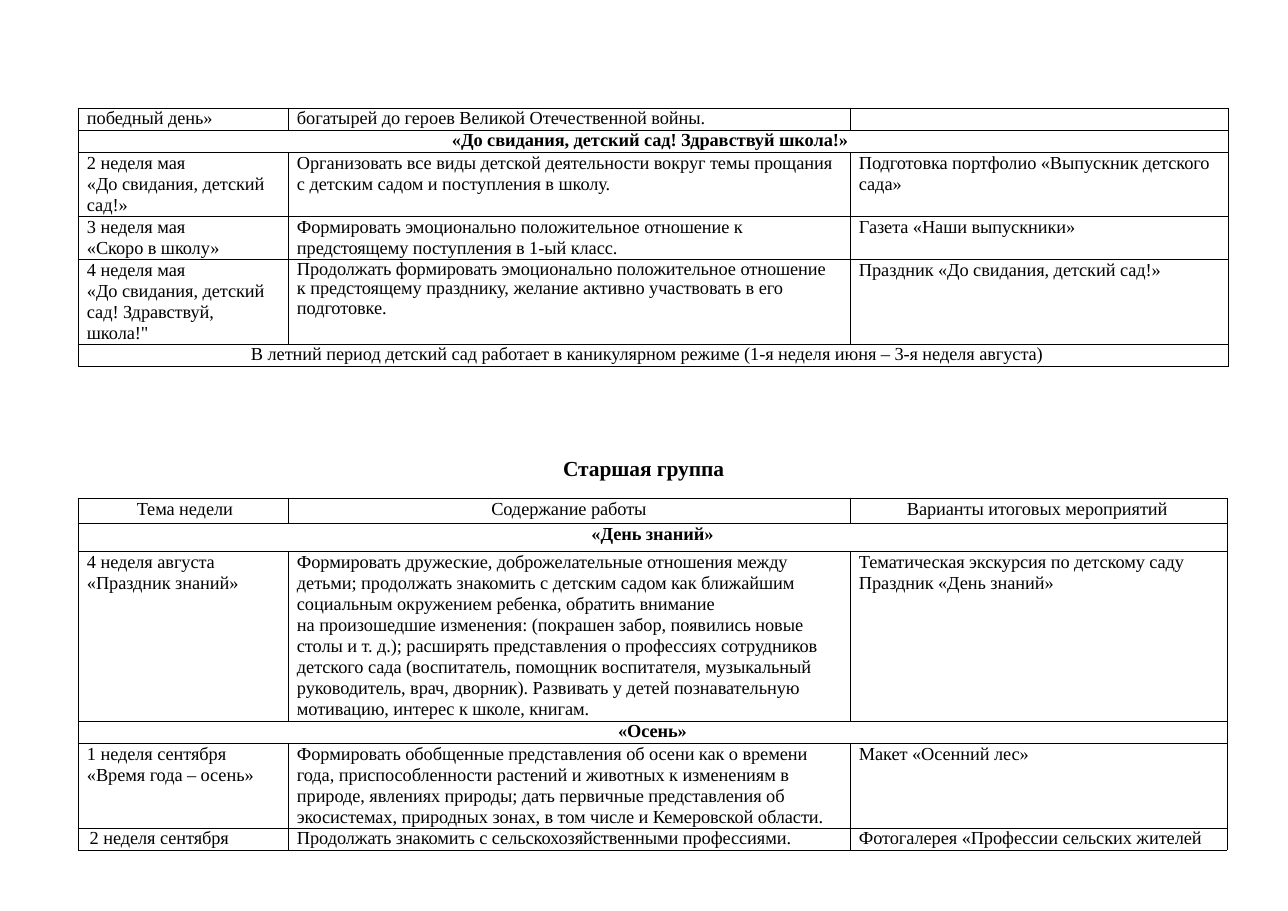
from lxml import etree
from pptx import Presentation
from pptx.dml.color import RGBColor
from pptx.enum.text import MSO_ANCHOR, PP_ALIGN
from pptx.oxml.ns import qn
from pptx.util import Emu, Pt

LEFT, CENTER, RIGHT = PP_ALIGN.LEFT, PP_ALIGN.CENTER, PP_ALIGN.RIGHT
BLACK = RGBColor(0, 0, 0)
FONT = "Times New Roman"
BORDER_WIDTH = Pt(0.5)
LETTER_SPACING = "-5"  # hundredths of a point

SLIDE_SIZE = (1288, 911)
TABLE_LEFT = 78
COLUMN_WIDTHS = (210, 562, 377)
RIGHT_MARGINS = (20, 15, 8)
CELL_INDENT = 9
SINGLE_LINE_ROW = 22

TITLE = "Старшая группа"
TITLE_BOX = (562, 452, 168, 29)

# A cell is a text, or a dict with its text and formatting; a row with one cell spans the table.
SCHOOL_TOP = 108
SCHOOL_ROWS = [
    (22, ["победный день»", "богатырей до героев Великой Отечественной войны.", ""]),
    (22, [{"text": "«До свидания, детский сад! Здравствуй школа!»",
           "indent": 374, "bold": True}]),
    (64, ["2 неделя мая\n«До свидания, детский сад!»",
          "Организовать все виды детской деятельности вокруг темы прощания "
          "с детским садом и поступления в школу.",
          "Подготовка портфолио «Выпускник детского сада»"]),
    (43, ["3 неделя мая\n«Скоро в школу»",
          "Формировать эмоционально положительное отношение к "
          "предстоящему поступления в 1-ый класс.",
          "Газета «Наши выпускники»"]),
    (85, ["4 неделя мая\n«До свидания, детский сад! Здравствуй, школа!\"",
          {"text": "Продолжать формировать эмоционально положительное отношение "
                   "к предстоящему празднику, желание активно участвовать в его "
                   "подготовке.", "line_spacing": 0.96},
          "Праздник «До свидания, детский сад!»"]),
    (22, [{"text": "В летний период детский сад работает в каникулярном режиме "
                   "(1-я неделя июня – 3-я неделя августа)", "indent": 173}]),
]

AUTUMN_TOP = 498
AUTUMN_ROWS = [
    (25, [{"text": "Тема недели", "align": RIGHT, "right": 55},
          {"text": "Содержание работы", "align": CENTER, "indent": 0, "right": 0},
          {"text": "Варианты итоговых мероприятий", "indent": 57}]),
    (28, [{"text": "«День знаний»", "align": CENTER, "indent": 0, "bold": True}]),
    (170, ["4 неделя августа\n«Праздник знаний»",
           "Формировать дружеские, доброжелательные отношения между "
           "детьми; продолжать знакомить с детским садом как ближайшим "
           "социальным окружением ребенка, обратить внимание\n"
           "на произошедшие изменения: (покрашен забор, появились новые "
           "столы и т. д.); расширять представления о профессиях сотрудников\n"
           "детского сада (воспитатель, помощник воспитателя, музыкальный "
           "руководитель, врач, дворник). Развивать у детей познавательную "
           "мотивацию, интерес к школе, книгам.",
           "Тематическая экскурсия по детскому саду Праздник «День знаний»"]),
    (22, [{"text": "«Осень»", "align": CENTER, "indent": 0, "bold": True}]),
    (85, ["1 неделя сентября\n«Время года – осень»",
          "Формировать обобщенные представления об осени как о времени "
          "года, приспособленности растений и животных к изменениям в "
          "природе, явлениях природы; дать первичные представления об "
          "экосистемах, природных зонах, в том числе и Кемеровской области.",
          "Макет «Осенний лес»"]),
    (22, [{"text": "2 неделя сентября", "align": RIGHT, "indent": 0, "right": 59},
          "Продолжать знакомить с сельскохозяйственными профессиями.",
          "Фотогалерея «Профессии сельских жителей"]),
]


def px(length):
    return Emu(round(length * 914400 / 110.2))


def format_paragraph(paragraph, size, bold, align):
    paragraph.alignment = align
    paragraph.font.size = Pt(size)
    for run in paragraph.runs:
        run.font.name = FONT
        run.font.size = Pt(size)
        run.font.bold = bold
        run.font.color.rgb = BLACK
        run._r.get_or_add_rPr().set("spc", LETTER_SPACING)


def draw_borders(cell):
    properties = cell._tc.get_or_add_tcPr()
    for side in ("a:lnL", "a:lnR", "a:lnT", "a:lnB"):
        line = etree.SubElement(properties, qn(side), w=str(BORDER_WIDTH))
        fill = etree.SubElement(line, qn("a:solidFill"))
        etree.SubElement(fill, qn("a:srgbClr"), val=str(BLACK))


def fill_cell(cell, text="", indent=CELL_INDENT, right=0, align=LEFT, bold=False,
              line_spacing=Pt(13.8)):
    cell.margin_left, cell.margin_right = px(indent), px(right)
    cell.margin_top = cell.margin_bottom = 0
    draw_borders(cell)
    cell.fill.background()
    cell.text_frame.text = text
    for paragraph in cell.text_frame.paragraphs:
        paragraph.line_spacing = line_spacing
        format_paragraph(paragraph, 12, bold, align)


def add_plan_table(slide, top, rows):
    height = sum(row_height for row_height, _ in rows)
    table = slide.shapes.add_table(
        len(rows), len(COLUMN_WIDTHS), px(TABLE_LEFT), px(top),
        px(sum(COLUMN_WIDTHS)), px(height)).table
    table.first_row = table.horz_banding = False
    for column, width in zip(table.columns, COLUMN_WIDTHS):
        column.width = px(width)
    for row_index, (row_height, contents) in enumerate(rows):
        table.rows[row_index].height = px(row_height)
        spacing = Pt(13.3) if row_height == SINGLE_LINE_ROW else Pt(13.8)
        spans_table = len(contents) == 1
        padded = contents + [""] * (len(COLUMN_WIDTHS) - len(contents))
        for column_index, content in enumerate(padded):
            options = {"line_spacing": spacing,
                       "right": 0 if spans_table else RIGHT_MARGINS[column_index]}
            options.update(content if isinstance(content, dict) else {"text": content})
            fill_cell(table.cell(row_index, column_index), **options)
        if spans_table:
            table.cell(row_index, 0).merge(table.cell(row_index, len(COLUMN_WIDTHS) - 1))


def add_title(slide):
    title = slide.shapes.title
    title.left, title.top, title.width, title.height = map(px, TITLE_BOX)
    frame = title.text_frame
    frame.text = TITLE
    frame.word_wrap = True
    frame.vertical_anchor = MSO_ANCHOR.TOP
    frame.margin_left = px(1)
    frame.margin_top = px(3)
    frame.margin_right = frame.margin_bottom = 0
    format_paragraph(frame.paragraphs[0], 14, True, LEFT)


def main():
    presentation = Presentation()
    presentation.slide_width, presentation.slide_height = map(px, SLIDE_SIZE)
    slide = presentation.slides.add_slide(presentation.slide_layouts[5])
    add_plan_table(slide, SCHOOL_TOP, SCHOOL_ROWS)
    add_title(slide)
    add_plan_table(slide, AUTUMN_TOP, AUTUMN_ROWS)
    presentation.save("out.pptx")


if __name__ == "__main__":
    main()
